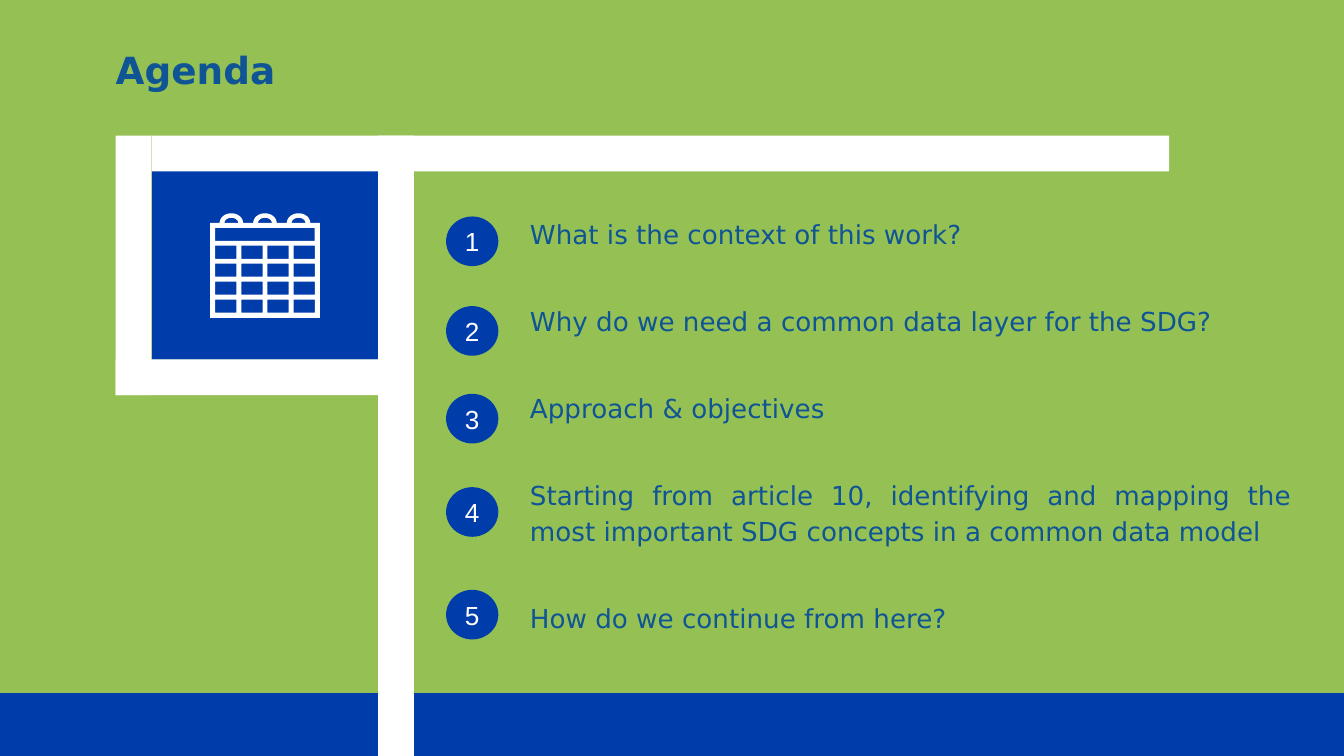
import math

import pptx
import pptx.dml.color
import pptx.enum.shapes
import pptx.enum.text
import pptx.util

Pt = pptx.util.Pt
SHAPES = pptx.enum.shapes.MSO_SHAPE
ALIGN = pptx.enum.text.PP_ALIGN
ANCHOR = pptx.enum.text.MSO_ANCHOR

GREEN, BLUE, WHITE, NAVY = "95C154", "003DAB", "FFFFFF", "0F5494"
HEADING = {"name": "DejaVu Sans", "size": Pt(20), "bold": True}
BODY = {"name": "DejaVu Sans", "size": Pt(14)}
NUMBER = {"name": "Arial", "size": Pt(14)}

# Agenda entries with the top of each number circle
ITEMS = [
    ("What is the context of this work?", 116),
    ("Why do we need a common data layer for the SDG?", 164),
    ("Approach & objectives", 211),
    ("Starting from article 10, identifying and mapping the most important "
     "SDG concepts in a common data model", 261),
    ("How do we continue from here?", 316),
]


def color(value):
    return pptx.dml.color.RGBColor.from_string(value)


def set_values(target, values):
    for name, value in values.items():
        setattr(target, name, value)


def paint(shape, fill):
    shape.fill.solid()
    shape.fill.fore_color.rgb = color(fill)
    shape.line.fill.background()
    shape.shadow.inherit = False


def add_block(slide, box, fill, kind=SHAPES.RECTANGLE):
    shape = slide.shapes.add_shape(kind, *map(Pt, box))
    paint(shape, fill)
    return shape


def format_frame(frame, anchor, wrap=True):
    margins = ("margin_left", "margin_top", "margin_right", "margin_bottom")
    set_values(frame, dict.fromkeys(margins, 0))
    set_values(frame, {"vertical_anchor": anchor, "word_wrap": wrap})


def write(paragraph, text, font, text_color, **layout):
    run = paragraph.add_run()
    run.text = text
    set_values(run.font, font)
    run.font.color.rgb = color(text_color)
    set_values(paragraph, layout)


def add_title(slide, box, text):
    title = slide.shapes.title
    set_values(title, dict(zip(("left", "top", "width", "height"), map(Pt, box))))
    format_frame(title.text_frame, ANCHOR.TOP)
    write(title.text_frame.paragraphs[0], text, HEADING, NAVY, alignment=ALIGN.LEFT)


def arch(center, base, radius_x, radius_y, steps=16):
    """Points of a half ellipse from left to right."""
    angles = [math.pi * (1 - step / steps) for step in range(steps + 1)]
    return [(center + radius_x * math.cos(angle), base - radius_y * math.sin(angle))
            for angle in angles]


def rectangle(left, top, width, height):
    return [(left, top), (left + width, top),
            (left + width, top + height), (left, top + height)]


def add_calendar(slide, box):
    left, top, width, height = box
    base = top + 5.2
    centers = [left + width / 2 + offset for offset in (-18, 0, 18)]
    outline = [(left, base)]
    for center in centers:
        outline += arch(center, base, 6.3, 5.2)
    outline += [(left + width, base), (left + width, top + height), (left, top + height)]

    holes = [arch(center, base, 3.7, 2.8) for center in centers]
    holes.append(rectangle(left + 2.7, top + 7.8, width - 5.4, 7))
    holes += [rectangle(left + 2.7 + 14 * column, top + 17.4 + 9.6 * row, 11.4, 7)
              for row in range(4) for column in range(4)]

    first, *rest = [[(Pt(x), Pt(y)) for x, y in contour] for contour in [outline] + holes]
    builder = slide.shapes.build_freeform(*first[0])
    builder.add_line_segments(first[1:], close=True)
    for contour in rest:
        builder.move_to(*contour[0])
        builder.add_line_segments(contour[1:], close=True)
    paint(builder.convert_to_shape(), WHITE)


def add_frame(slide, box, tile_bottom, bar=19.2):
    """White bars around the tile, with the right one running to the bottom."""
    left, top, width, height = box
    post = left + 140.5
    add_block(slide, (left, top, bar, tile_bottom - top), WHITE)
    add_block(slide, (post, top, bar, height), WHITE)
    add_block(slide, (left + bar, top, width - bar, bar), WHITE)
    add_block(slide, (left, tile_bottom - bar, post - left + bar / 2, bar), WHITE)


def add_agenda(slide, box):
    left, top, width, height = box
    text_left = left + 44.9
    text_box = slide.shapes.add_textbox(
        *map(Pt, (text_left, top, width - 44.9, height)))
    frame = text_box.text_frame
    format_frame(frame, ANCHOR.TOP)
    for index, (text, circle_top) in enumerate(ITEMS):
        paragraph = frame.add_paragraph() if index else frame.paragraphs[0]
        write(paragraph, text, BODY, NAVY, alignment=ALIGN.JUSTIFY, line_spacing=1.15,
              space_before=Pt(27.3 if index else 4))
        circle = add_block(slide, (left, circle_top, 28, 26.6), BLUE, SHAPES.OVAL)
        format_frame(circle.text_frame, ANCHOR.MIDDLE, wrap=False)
        write(circle.text_frame.paragraphs[0], str(index + 1), NUMBER, WHITE,
              alignment=ALIGN.CENTER)


def main():
    presentation = pptx.Presentation()
    presentation.slide_width, presentation.slide_height = Pt(720), Pt(405)
    slide = presentation.slides.add_slide(presentation.slide_layouts[5])
    slide.background.fill.solid()
    slide.background.fill.fore_color.rgb = color(GREEN)

    add_block(slide, (81.5, 91.2, 121, 101.6), BLUE)
    add_calendar(slide, (112.6, 114.3, 58.7, 56))
    add_block(slide, (0, 371.4, 720, 33.6), BLUE)
    add_title(slide, (62, 25.2, 263, 34.6), "Agenda")
    add_frame(slide, (62, 72.7, 564.3, 332.3), 211.7)
    add_agenda(slide, (239, 114.5, 453, 246))
    presentation.save("out.pptx")


if __name__ == "__main__":
    main()
